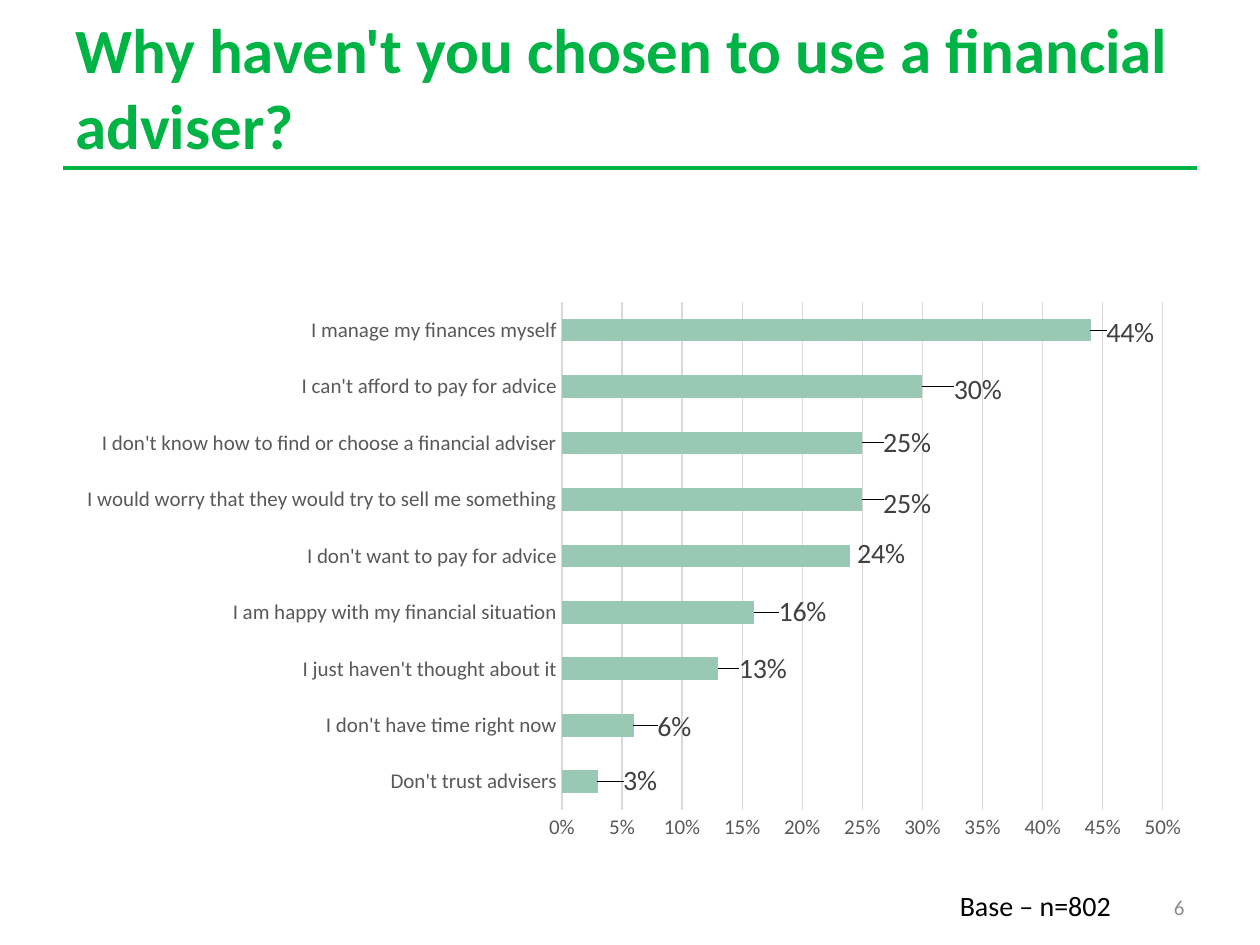
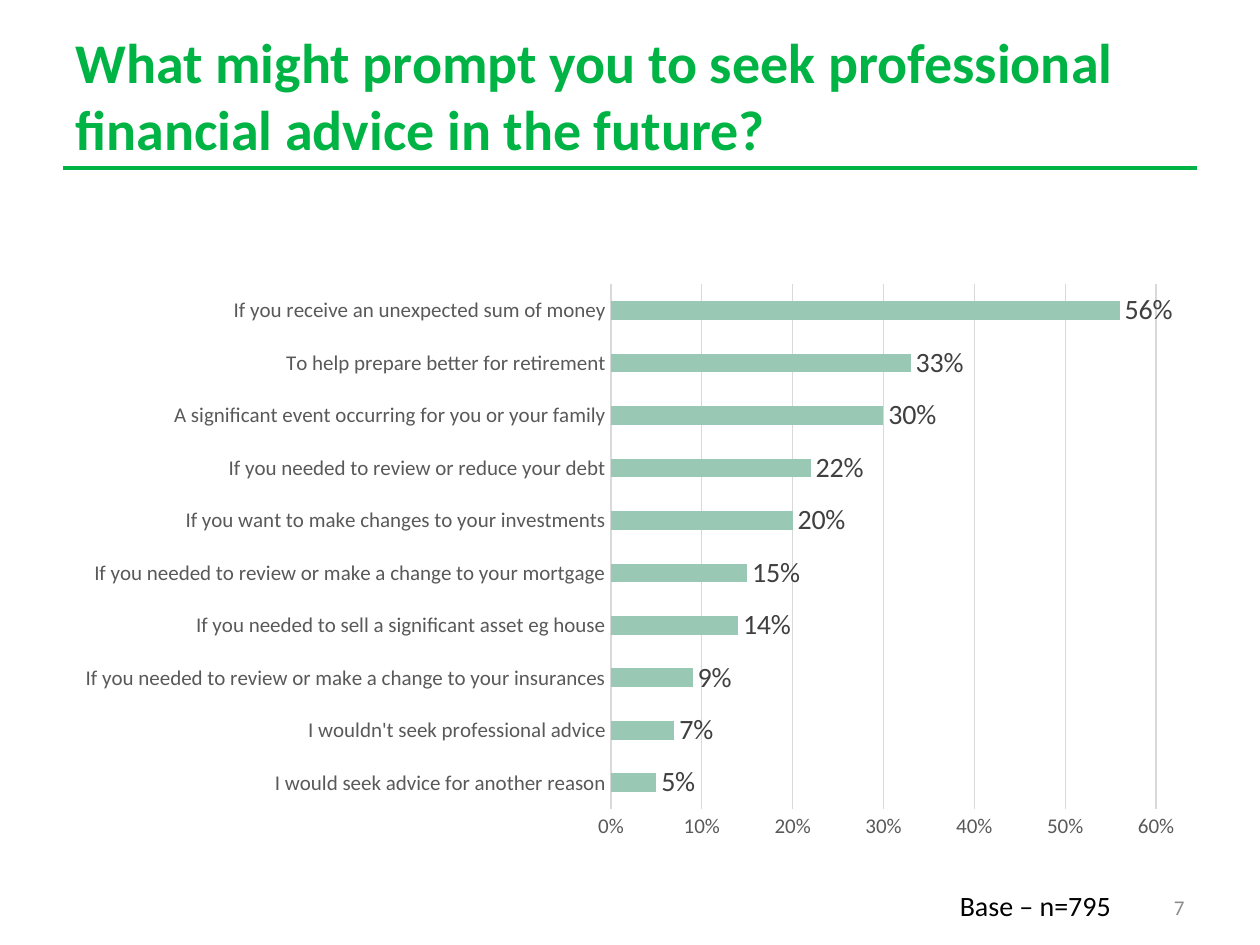
from dataclasses import dataclass

from lxml import etree
from pptx import Presentation
from pptx.chart.data import CategoryChartData
from pptx.dml.color import RGBColor
from pptx.enum.chart import XL_CHART_TYPE as ChartType
from pptx.enum.chart import XL_LABEL_POSITION as LabelPosition
from pptx.enum.chart import XL_TICK_MARK as TickMark
from pptx.enum.shapes import MSO_CONNECTOR as Connector
from pptx.enum.text import MSO_ANCHOR as Anchor
from pptx.enum.text import MSO_AUTO_SIZE as AutoSize
from pptx.enum.text import PP_ALIGN as Align
from pptx.oxml.ns import qn
from pptx.util import Pt


@dataclass(frozen=True)
class Theme:
    font: str = "Calibri"
    green: str = "00B345"
    bar: str = "99C8B4"
    grid: str = "D9D9D9"
    axis_text: str = "595959"
    label_text: str = "404040"
    page_number: str = "8C8C8C"
    black: str = "000000"
    axis_size: float = 12
    label_size: float = 16
    chart_size: float = 10
    rule_width: float = 2.5
    grid_width: float = 0.75


@dataclass(frozen=True)
class Box:
    left: float
    top: float
    width: float
    height: float

    def lengths(self):
        return Pt(self.left), Pt(self.top), Pt(self.width), Pt(self.height)


THEME = Theme()
TITLE_BOX = Box(36, 21.6, 648, 74.4)
CHART_BOX = Box(36, 156, 648, 330)
FOOTER_BOX = Box(516, 504, 168, 28.8)

# Answer, share of respondents, and the label's shift in points from its
# default place inside the end of the bar.
REASONS = [
    ("Don't trust advisers", 0.03, (36.5, 0)),
    ("I don't have time right now", 0.06, (35.5, 1)),
    ("I just haven't thought about it", 0.13, (42, 0.5)),
    ("I am happy with my financial situation", 0.16, (44, 0)),
    ("I don't want to pay for advice", 0.24, (34, -1)),
    ("I would worry that they would try to sell me something", 0.25, (42, 3)),
    ("I don't know how to find or choose a financial adviser", 0.25, (42, 0.5)),
    ("I can't afford to pay for advice", 0.30, (48, 2)),
    ("I manage my finances myself", 0.44, (39, 2)),
]

PROMPTS = [
    ("I would seek advice for another reason", 0.05),
    ("I wouldn't seek professional advice", 0.07),
    ("If you needed to review or make a change to your insurances", 0.09),
    ("If you needed to sell a significant asset eg house", 0.14),
    ("If you needed to review or make a change to your mortgage", 0.15),
    ("If you want to make changes to your investments", 0.20),
    ("If you needed to review or reduce your debt", 0.22),
    ("A significant event occurring for you or your family", 0.30),
    ("To help prepare better for retirement", 0.33),
    ("If you receive an unexpected sum of money", 0.56),
]


def style_font(font, size, color, bold=False):
    font.name = THEME.font
    font.size = Pt(size)
    font.bold = bold
    font.color.rgb = RGBColor.from_string(color)


def style_line(line, color, width):
    line.color.rgb = RGBColor.from_string(color)
    line.width = Pt(width)


def add_text(slide, box, text, size, color, bold=False, anchor=Anchor.TOP,
             align=Align.LEFT, wrap=True):
    frame = slide.shapes.add_textbox(*box.lengths()).text_frame
    frame.word_wrap = wrap
    frame.auto_size = AutoSize.NONE if wrap else AutoSize.SHAPE_TO_FIT_TEXT
    frame.vertical_anchor = anchor
    frame.text = text
    paragraph = frame.paragraphs[0]
    paragraph.alignment = align
    style_font(paragraph.runs[0].font, size, color, bold)


def add_title(slide, box, text, size):
    """Place a bottom-anchored title with a rule along the box's lower edge."""
    bottom = Pt(box.top + box.height)
    rule = slide.shapes.add_connector(
        Connector.STRAIGHT, Pt(box.left), bottom, Pt(box.left + box.width), bottom)
    style_line(rule.line, THEME.green, THEME.rule_width)
    etree.SubElement(rule._element.spPr, qn("a:effectLst"))
    add_text(slide, box, text, size, THEME.green, bold=True, anchor=Anchor.BOTTOM)


def add_footer(slide, box, base, number):
    add_text(slide, box, str(number), THEME.axis_size, THEME.page_number,
             anchor=Anchor.MIDDLE, align=Align.RIGHT)
    base_box = Box(box.left + 25.4, box.top, 102.2, 26.6)
    add_text(slide, base_box, f"Base – n={base}", THEME.label_size, THEME.black,
             wrap=False)


def manual_layout(**values):
    """Return a c:layout element holding the given settings in order."""
    layout = etree.Element(qn("c:layout"))
    manual = etree.SubElement(layout, qn("c:manualLayout"))
    for name, value in values.items():
        etree.SubElement(manual, qn(f"c:{name}")).set("val", str(value))
    return layout


def set_plot_area(chart, x, y, w, h):
    plot_area = chart._chartSpace.chart.plotArea
    for layout in plot_area.findall(qn("c:layout")):
        plot_area.remove(layout)
    plot_area.insert(0, manual_layout(
        layoutTarget="inner", xMode="edge", yMode="edge", x=x, y=y, w=w, h=h))


def style_axes(chart):
    for axis in (chart.category_axis, chart.value_axis):
        axis.major_tick_mark = axis.minor_tick_mark = TickMark.NONE
        style_font(axis.tick_labels.font, THEME.axis_size, THEME.axis_text)
    chart.category_axis.has_major_gridlines = False
    style_line(chart.category_axis.format.line, THEME.grid, THEME.grid_width)
    values = chart.value_axis
    values.minimum_scale = 0
    values.has_major_gridlines = True
    style_line(values.major_gridlines.format.line, THEME.grid, THEME.grid_width)
    values.format.line.fill.background()
    values.tick_labels.number_format = "0%"
    values.tick_labels.number_format_is_linked = False


def add_bar_chart(slide, box, chart_type, answers, gap, label_position):
    data = CategoryChartData(number_format="0%")
    data.categories = [answer[0] for answer in answers]
    data.add_series("Series 1", [answer[1] for answer in answers])
    chart = slide.shapes.add_chart(chart_type, *box.lengths(), data).chart
    chart.has_title = chart.has_legend = False
    style_font(chart.font, THEME.chart_size, THEME.black)
    style_axes(chart)

    plot = chart.plots[0]
    plot.gap_width = gap
    plot.vary_by_categories = False
    series = plot.series[0]
    series.format.fill.solid()
    series.format.fill.fore_color.rgb = RGBColor.from_string(THEME.bar)
    labels = series.data_labels
    labels.show_value = True
    labels.number_format = "0%"
    labels.number_format_is_linked = False
    labels.position = label_position
    style_font(labels.font, THEME.label_size, THEME.label_text)
    return chart


def shift_labels(chart, box, shifts, position):
    """Move each bar's label by its (x, y) shift in points."""
    series = chart.plots[0].series[0]
    for index, _ in enumerate(shifts):
        label = series.points[index].data_label
        label.position = position
        style_font(label.font, THEME.label_size, THEME.label_text)
    for element, (x, y) in zip(series._element.iter(qn("c:dLbl")), shifts):
        element.insert(1, manual_layout(x=x / box.width, y=y / box.height))


def add_survey_slide(presentation, title, title_size, base, number):
    slide = presentation.slides.add_slide(presentation.slide_layouts[6])
    add_title(slide, TITLE_BOX, title, title_size)
    add_footer(slide, FOOTER_BOX, base, number)
    return slide


def add_reasons_slide(presentation):
    slide = add_survey_slide(
        presentation, "Why haven't you chosen to use a financial adviser?", 36, 802, 6)
    position = LabelPosition.INSIDE_END
    chart = add_bar_chart(slide, CHART_BOX, ChartType.BAR_STACKED, REASONS, 150, position)
    set_plot_area(chart, x=0.44, y=0.05, w=0.53, h=0.88)
    shift_labels(chart, CHART_BOX, [reason[2] for reason in REASONS], position)


def add_prompts_slide(presentation):
    slide = add_survey_slide(
        presentation,
        "What might prompt you to seek professional financial advice in the future?",
        32, 795, 7)
    add_bar_chart(slide, CHART_BOX, ChartType.BAR_CLUSTERED, PROMPTS, 182,
                  LabelPosition.OUTSIDE_END)


def main():
    presentation = Presentation()
    presentation.slide_width = Pt(720)
    presentation.slide_height = Pt(540)
    add_reasons_slide(presentation)
    add_prompts_slide(presentation)
    presentation.save("out.pptx")


if __name__ == "__main__":
    main()
